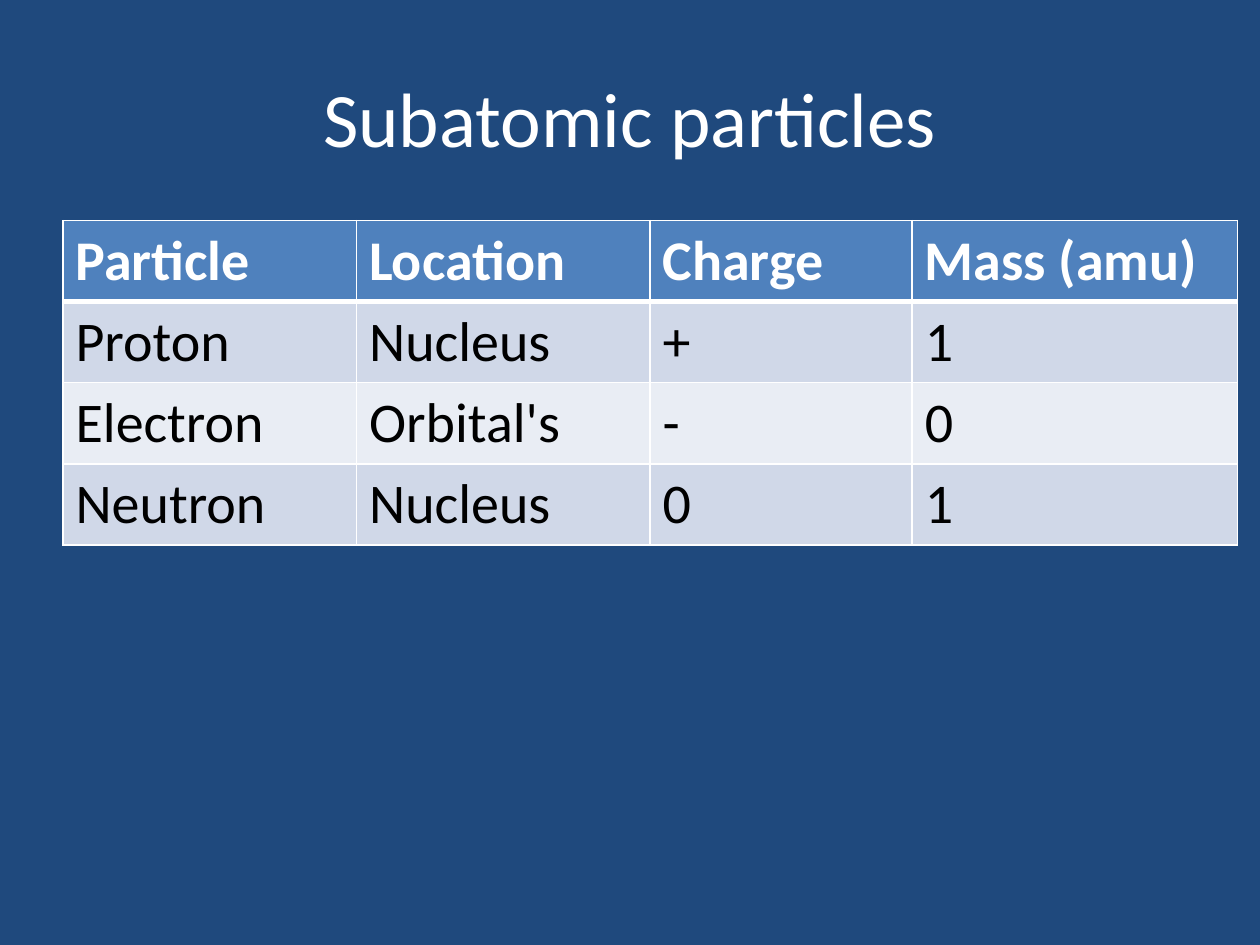
from dataclasses import dataclass

from lxml import etree
from pptx import Presentation
from pptx.dml.color import RGBColor
from pptx.enum import text
from pptx.oxml.ns import qn
from pptx.util import Inches, Pt


@dataclass(frozen=True)
class Theme:
    font: str = "Calibri"
    title_size: int = 44
    table_size: int = 32
    background: str = "1F497D"
    light: str = "FFFFFF"
    dark: str = "000000"
    header: str = "4F81BD"
    bands: tuple[str, str] = ("D0D8E8", "E9EDF4")
    rule: float = 1
    header_rule: float = 3


@dataclass(frozen=True)
class Particle:
    name: str
    location: str
    charge: str
    mass: str


THEME = Theme()
HEADINGS = ("Particle", "Location", "Charge", "Mass (amu)")
PARTICLES = (
    Particle("Proton", "Nucleus", "+", "1"),
    Particle("Electron", "Orbital's", "-", "0"),
    Particle("Neutron", "Nucleus", "0", "1"),
)
COLUMN_WIDTHS = (2.33, 2.33, 2.08, 2.58)
ROW_HEIGHT = 0.64


def style_paragraph(p, size: int, color: str, bold: bool = False) -> None:
    p.font.name = THEME.font
    p.font.size = Pt(size)
    p.font.bold = bold
    p.font.color.rgb = RGBColor.from_string(color)


def add_borders(cell, top: float, bottom: float) -> None:
    """Rule all four sides; must run before the cell's fill is set."""
    tc_pr = cell._tc.get_or_add_tcPr()
    widths = {"L": THEME.rule, "R": THEME.rule, "T": top, "B": bottom}
    for side, width in widths.items():
        ln = etree.SubElement(tc_pr, qn(f"a:ln{side}"), w=str(Pt(width)))
        fill = etree.SubElement(ln, qn("a:solidFill"))
        etree.SubElement(fill, qn("a:srgbClr"), val=THEME.light)


def fill_row(cells, values: tuple[str, ...], index: int) -> None:
    is_header = index == 0
    fill = THEME.header if is_header else THEME.bands[(index - 1) % 2]
    color = THEME.light if is_header else THEME.dark
    top = THEME.header_rule if index == 1 else THEME.rule
    bottom = THEME.header_rule if is_header else THEME.rule
    for cell, value in zip(cells, values):
        cell.text = value
        style_paragraph(cell.text_frame.paragraphs[0], THEME.table_size, color, is_header)
        add_borders(cell, top, bottom)
        cell.fill.solid()
        cell.fill.fore_color.rgb = RGBColor.from_string(fill)


def add_title(s, title: str) -> None:
    sp = s.shapes.title
    sp.left, sp.top, sp.width, sp.height = map(Inches, (0.5, 0.3, 9, 1.25))
    tf = sp.text_frame
    tf.text = title
    tf.vertical_anchor = text.MSO_ANCHOR.MIDDLE
    p = tf.paragraphs[0]
    p.alignment = text.PP_ALIGN.CENTER
    style_paragraph(p, THEME.title_size, THEME.light)


def add_particle_table(s) -> None:
    rows = [HEADINGS] + [(x.name, x.location, x.charge, x.mass) for x in PARTICLES]
    table = s.shapes.add_table(
        len(rows), len(HEADINGS), Inches(0.5), Inches(1.75),
        Inches(sum(COLUMN_WIDTHS)), Inches(ROW_HEIGHT * len(rows)),
    ).table
    for column, width in zip(table.columns, COLUMN_WIDTHS):
        column.width = Inches(width)
    for index, (row, values) in enumerate(zip(table.rows, rows)):
        row.height = Inches(ROW_HEIGHT)
        fill_row(row.cells, values, index)


def main() -> None:
    prs = Presentation()
    prs.slide_width, prs.slide_height = Inches(10), Inches(7.5)
    s = prs.slides.add_slide(prs.slide_layouts.get_by_name("Title Only"))
    s.background.fill.solid()
    s.background.fill.fore_color.rgb = RGBColor.from_string(THEME.background)
    add_title(s, "Subatomic particles")
    add_particle_table(s)
    prs.save("out.pptx")


if __name__ == "__main__":
    main()
